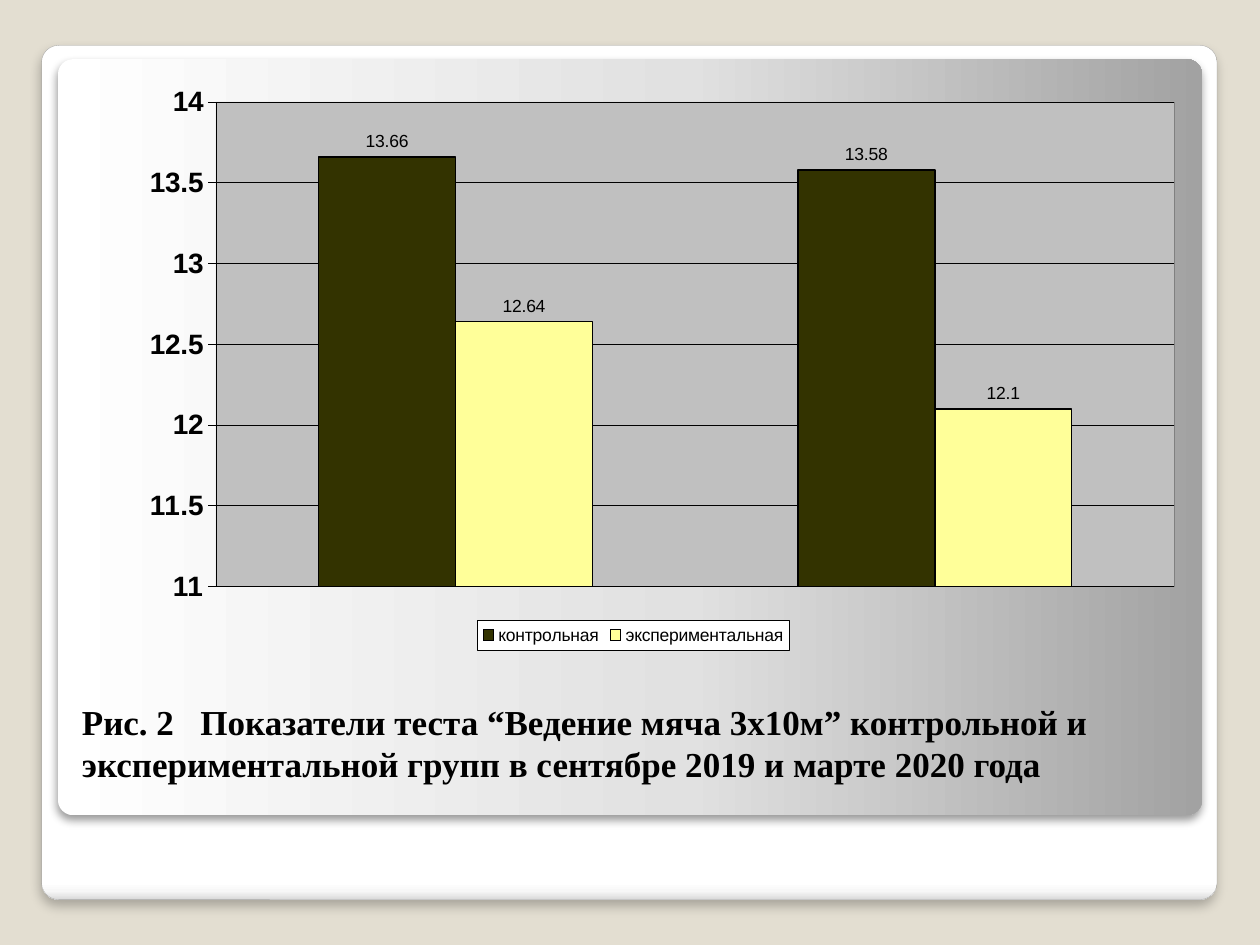
from lxml import etree
from pptx import Presentation
from pptx.chart.data import CategoryChartData
from pptx.dml.color import RGBColor
from pptx.enum.chart import XL_CHART_TYPE, XL_LABEL_POSITION, XL_LEGEND_POSITION, XL_TICK_MARK
from pptx.enum.shapes import MSO_SHAPE
from pptx.enum.text import MSO_ANCHOR, MSO_AUTO_SIZE, PP_ALIGN
from pptx.oxml import parse_xml
from pptx.oxml.ns import qn
from pptx.util import Inches, Pt

COLUMNS = XL_CHART_TYPE.COLUMN_CLUSTERED
OUTSIDE_END = XL_LABEL_POSITION.OUTSIDE_END
LEGEND_BOTTOM = XL_LEGEND_POSITION.BOTTOM
TICK_OUTSIDE = XL_TICK_MARK.OUTSIDE
ROUNDED = MSO_SHAPE.ROUNDED_RECTANGLE
ANCHOR_BOTTOM = MSO_ANCHOR.BOTTOM
NO_AUTOFIT = MSO_AUTO_SIZE.NONE
LEFT = PP_ALIGN.LEFT

COLORS = {
    "background": "E3DED1",
    "text": "000000",
    "frame_line": "A4A4A3",
    "plot": "C0C0C0",
    "plot_line": "808080",
    "legend": "FFFFFF",
    "control": "333300",
    "experimental": "FFFF99",
}
NAMESPACES = (
    'xmlns:a="http://schemas.openxmlformats.org/drawingml/2006/main" '
    'xmlns:c="http://schemas.openxmlformats.org/drawingml/2006/chart"'
)

deck = Presentation()
deck.slide_width, deck.slide_height = Inches(10), Inches(7.5)
column, row = deck.slide_width / 100, deck.slide_height / 100
page = deck.slides.add_slide(deck.slide_layouts[5])
page.background.fill.solid()
page.background.fill.fore_color.rgb = RGBColor.from_string(COLORS["background"])


def grid_area(left, top, width, height):
    return [round(size) for size in (left * column, top * row, width * column, height * row)]


def chart_fill(fill, line, points):
    return parse_xml(
        f'<c:spPr {NAMESPACES}><a:solidFill><a:srgbClr val="{COLORS[fill]}"/></a:solidFill>'
        f'<a:ln w="{Pt(points)}"><a:solidFill><a:srgbClr val="{COLORS[line]}"/></a:solidFill></a:ln></c:spPr>'
    )


panels = [
    {
        "area": (3.3, 4.8, 93.3, 90.4),
        "stops": [(0, "FFFFFF"), (98, "FFFFFF"), (99, "F7F7F7"), (100, "DADADA")],
        "angle": 270, "line": "frame_line", "shadow": (25, 6, 4),
    },
    {
        "area": (4.6, 6.27, 90.8, 80),
        "stops": [(0, "FFFFFF"), (55, "E1E1E1"), (100, "A2A2A2")],
        "angle": 0, "line": None, "shadow": (40, 5.2, 3),
    },
]
for panel in panels:
    box = page.shapes.add_shape(ROUNDED, *grid_area(*panel["area"]))
    box.adjustments[0] = 0.02
    box.fill.gradient()
    box.fill.gradient_angle = panel["angle"]
    stop_list = box.element.spPr.find(".//" + qn("a:gsLst"))
    for stop in list(stop_list):
        stop_list.remove(stop)
    for position, color in panel["stops"]:
        stop = etree.SubElement(stop_list, qn("a:gs"), pos=str(position * 1000))
        etree.SubElement(stop, qn("a:srgbClr"), val=color)
    if panel["line"]:
        box.line.color.rgb = RGBColor.from_string(COLORS[panel["line"]])
        box.line.width = Pt(0.17)
    else:
        box.line.fill.background()
    box.shadow.inherit = False
    opacity, blur, distance = panel["shadow"]
    shadow = etree.SubElement(
        box.element.spPr.find(qn("a:effectLst")), qn("a:outerShdw"),
        blurRad=str(Pt(blur)), dist=str(Pt(distance)), dir="5400000", algn="t", rotWithShape="0",
    )
    shadow_color = etree.SubElement(shadow, qn("a:srgbClr"), val=COLORS["text"])
    etree.SubElement(shadow_color, qn("a:alpha"), val=str(opacity * 1000))

caption = page.shapes.title
caption.left, caption.top, caption.width, caption.height = grid_area(5.5, 72.67, 89.5, 15.33)
page.shapes.element.append(caption.element)
frame_format = {
    "word_wrap": True, "auto_size": NO_AUTOFIT, "vertical_anchor": ANCHOR_BOTTOM,
    "margin_left": Inches(0.1), "margin_right": Inches(0.1),
    "margin_top": Inches(0.05), "margin_bottom": Inches(0.37),
}
for name, value in frame_format.items():
    setattr(caption.text_frame, name, value)
para = caption.text_frame.paragraphs[0]
para.alignment = LEFT
span = para.add_run()
span.text = "Рис. 2	Показатели теста “Ведение мяча 3х10м” контрольной и экспериментальной групп в сентябре 2019 и марте 2020 года"
for name, value in {"name": "Times New Roman", "size": Pt(20), "bold": True}.items():
    setattr(span.font, name, value)
span.font.color.rgb = RGBColor.from_string(COLORS["text"])
tabs = etree.SubElement(para._p.get_or_add_pPr(), qn("a:tabLst"))
etree.SubElement(tabs, qn("a:tab"), pos=str(Inches(0.94)), algn="l")

data = CategoryChartData()
data.categories = ["1", "2"]
data.add_series("контрольная", (13.66, 13.58))
data.add_series("экспериментальная", (12.64, 12.1))
chart = page.shapes.add_chart(COLUMNS, *grid_area(5.5, 7.73, 89.5, 61.07), data).chart
chart.has_title = False
chart.has_legend = True
chart.legend.position = LEGEND_BOTTOM
chart.legend.include_in_layout = False
chart.category_axis.visible = False

axis = chart.value_axis
axis_format = {
    "minimum_scale": 11, "maximum_scale": 14, "major_unit": 0.5,
    "major_tick_mark": TICK_OUTSIDE, "has_major_gridlines": True,
}
for name, value in axis_format.items():
    setattr(axis, name, value)
axis.tick_labels.number_format = "General"
axis.tick_labels.number_format_is_linked = False
for line in (axis.format.line, axis.major_gridlines.format.line):
    line.color.rgb = RGBColor.from_string(COLORS["text"])
    line.width = Pt(0.25)

plot = chart.plots[0]
plot.gap_width, plot.overlap, plot.vary_by_categories = 150, 0, False
plot.has_data_labels = True
plot.data_labels.show_value = True
plot.data_labels.position = OUTSIDE_END
for series, color in zip(plot.series, ("control", "experimental")):
    series.invert_if_negative = False
    series.format.fill.solid()
    series.format.fill.fore_color.rgb = RGBColor.from_string(COLORS[color])
    series.format.line.color.rgb = RGBColor.from_string(COLORS["text"])
    series.format.line.width = Pt(1)

chart_fonts = [
    (chart.font, 10, False),
    (chart.legend.font, 10, False),
    (plot.data_labels.font, 10, False),
    (axis.tick_labels.font, 16, True),
]
for font, points, bold in chart_fonts:
    for name, value in {"name": "Arial", "size": Pt(points), "bold": bold}.items():
        setattr(font, name, value)
    font.color.rgb = RGBColor.from_string(COLORS["text"])

chart_root = chart.element
chart_root.find(".//" + qn("c:legend")).find(qn("c:txPr")).addprevious(chart_fill("legend", "text", 0.25))
plot_area = chart_root.find(".//" + qn("c:plotArea"))
plot_area.append(chart_fill("plot", "plot_line", 0.25))
for old_layout in plot_area.findall(qn("c:layout")):
    plot_area.remove(old_layout)
layout = etree.Element(qn("c:layout"))
plot_area.insert(0, layout)
manual = etree.SubElement(layout, qn("c:manualLayout"))
layout_values = {
    "layoutTarget": "inner", "xMode": "edge", "yMode": "edge",
    "x": 0.13, "y": 0.05, "w": 0.85, "h": 0.84,
}
for name, value in layout_values.items():
    etree.SubElement(manual, qn(f"c:{name}"), val=str(value))

deck.save("out.pptx")
